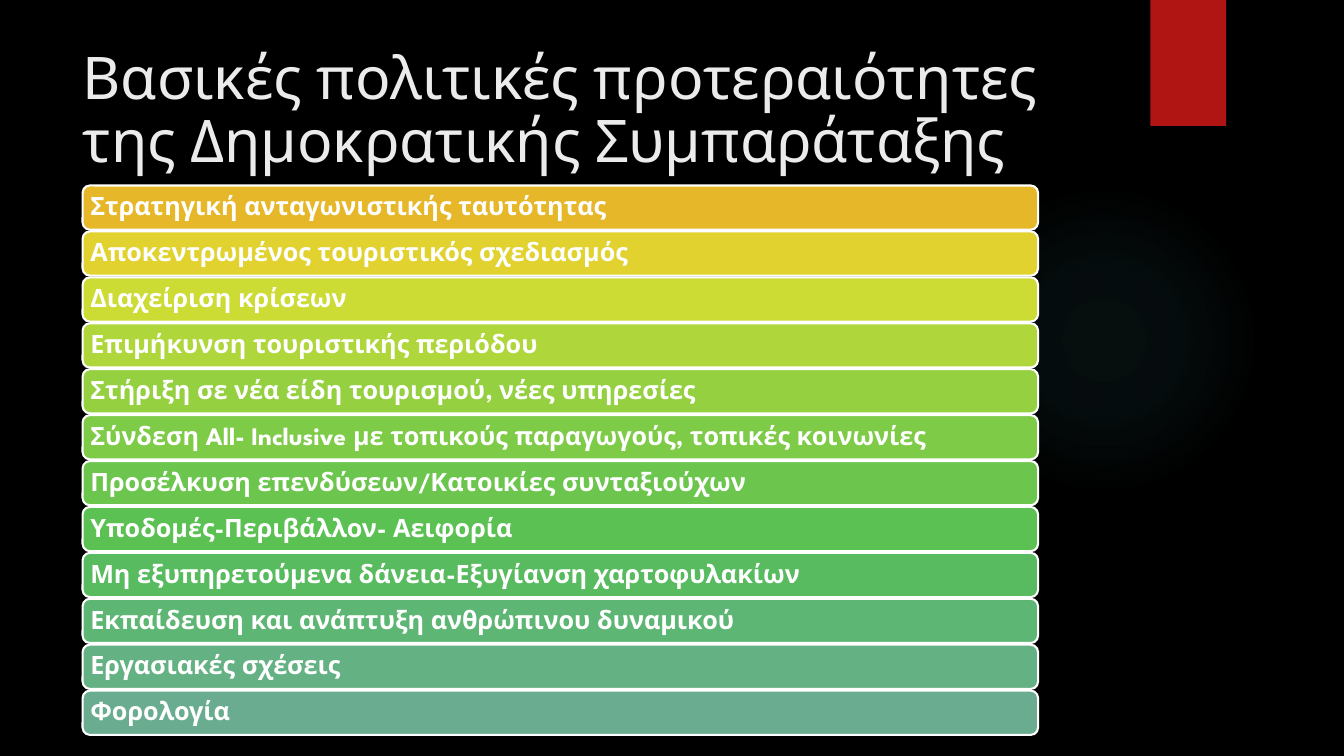
from dataclasses import dataclass

from lxml.etree import SubElement
from pptx import Presentation
from pptx.dml.color import RGBColor
from pptx.enum.shapes import MSO_SHAPE
from pptx.enum.text import MSO_ANCHOR, MSO_AUTO_SIZE, PP_ALIGN
from pptx.oxml.ns import qn
from pptx.shapes.autoshape import Shape
from pptx.slide import Slide
from pptx.text.text import TextFrame
from pptx.util import Pt

FONT = "League Spartan"
BLACK = RGBColor(0x00, 0x00, 0x00)
WHITE = RGBColor(0xFF, 0xFF, 0xFF)
TITLE_GREY = RGBColor(0xEB, 0xEB, 0xEB)
RIBBON_RED = RGBColor(0xB0, 0x15, 0x13)
GLOW_TEAL = RGBColor(0x50, 0xB9, 0xC1)

# Glow stops: position and opacity, both in percent
GLOW_STOPS = ((0, 7), (36, 6), (69, 0))

BAR_LEFT, BAR_TOP = 59, 132.5
BAR_WIDTH, BAR_HEIGHT = 682.5, 31.6
BAR_PITCH = 32.8


@dataclass(frozen=True)
class Priority:
    text: str
    color: RGBColor


PRIORITIES = (
    Priority("Στρατηγική ανταγωνιστικής ταυτότητας", RGBColor(0xE6, 0xB7, 0x29)),
    Priority("Αποκεντρωμένος τουριστικός σχεδιασμός", RGBColor(0xE1, 0xD2, 0x2F)),
    Priority("Διαχείριση κρίσεων", RGBColor(0xCD, 0xDB, 0x35)),
    Priority("Επιμήκυνση τουριστικής περιόδου", RGBColor(0xAF, 0xD6, 0x3B)),
    Priority("Στήριξη σε νέα είδη τουρισμού, νέες υπηρεσίες", RGBColor(0x95, 0xD0, 0x41)),
    Priority("Σύνδεση All- Inclusive με τοπικούς παραγωγούς, τοπικές κοινωνίες",
             RGBColor(0x7E, 0xCB, 0x47)),
    Priority("Προσέλκυση επενδύσεων/Κατοικίες συνταξιούχων", RGBColor(0x6C, 0xC6, 0x4D)),
    Priority("Υποδομές-Περιβάλλον- Αειφορία", RGBColor(0x5C, 0xC1, 0x53)),
    Priority("Μη εξυπηρετούμενα δάνεια-Εξυγίανση χαρτοφυλακίων",
             RGBColor(0x59, 0xBB, 0x60)),
    Priority("Εκπαίδευση και ανάπτυξη ανθρώπινου δυναμικού", RGBColor(0x5E, 0xB6, 0x74)),
    Priority("Εργασιακές σχέσεις", RGBColor(0x64, 0xB1, 0x84)),
    Priority("Φορολογία", RGBColor(0x6A, 0xAC, 0x90)),
)


def write_line(frame: TextFrame, text: str, size: float, color: RGBColor,
               bold: bool) -> None:
    frame.word_wrap = True
    frame.auto_size = MSO_AUTO_SIZE.NONE
    frame.vertical_anchor = MSO_ANCHOR.MIDDLE
    paragraph = frame.paragraphs[0]
    paragraph.alignment = PP_ALIGN.LEFT
    paragraph.line_spacing = 0.9
    run = paragraph.add_run()
    run.text = text
    run.font.name = FONT
    run.font.size = Pt(size)
    run.font.bold = bold
    run.font.color.rgb = color


def add_plain_shape(slide: Slide, preset: MSO_SHAPE, left: float, top: float,
                    width: float, height: float) -> Shape:
    shape = slide.shapes.add_shape(preset, Pt(left), Pt(top), Pt(width), Pt(height))
    shape.shadow.inherit = False
    shape.line.fill.background()
    return shape


def add_glow(slide: Slide) -> None:
    glow = add_plain_shape(slide, MSO_SHAPE.OVAL, 677.5, 131.75, 221.75, 221.75)
    glow.fill.gradient()
    gradient = glow._element.spPr.find(qn("a:gradFill"))
    for child in list(gradient):
        gradient.remove(child)
    stops = SubElement(gradient, qn("a:gsLst"))
    for position, opacity in GLOW_STOPS:
        stop = SubElement(stops, qn("a:gs"), pos=str(position * 1000))
        color = SubElement(stop, qn("a:srgbClr"), val=str(GLOW_TEAL))
        SubElement(color, qn("a:alpha"), val=str(opacity * 1000))
    circle = SubElement(gradient, qn("a:path"), path="circle")
    SubElement(circle, qn("a:fillToRect"), l="50000", t="50000", r="50000", b="50000")


def add_ribbon(slide: Slide) -> None:
    ribbon = add_plain_shape(slide, MSO_SHAPE.RECTANGLE, 821.75, 0, 54, 90)
    ribbon.fill.solid()
    ribbon.fill.fore_color.rgb = RIBBON_RED


def add_priority_bar(slide: Slide, priority: Priority, row: int) -> None:
    bar = add_plain_shape(slide, MSO_SHAPE.ROUNDED_RECTANGLE, BAR_LEFT,
                          BAR_TOP + row * BAR_PITCH, BAR_WIDTH, BAR_HEIGHT)
    bar.fill.solid()
    bar.fill.fore_color.rgb = priority.color
    bar.line.color.rgb = WHITE
    bar.line.width = Pt(1.5)
    frame = bar.text_frame
    frame.margin_left = frame.margin_right = Pt(4)
    frame.margin_top = frame.margin_bottom = Pt(4)
    write_line(frame, priority.text, 18, WHITE, bold=True)


def main() -> None:
    presentation = Presentation()
    presentation.slide_width, presentation.slide_height = Pt(960), Pt(540)
    slide = presentation.slides.add_slide(presentation.slide_layouts[5])
    slide.background.fill.solid()
    slide.background.fill.fore_color.rgb = BLACK

    # Backdrop
    add_glow(slide)
    add_ribbon(slide)

    # Title
    title = slide.shapes.title
    title.left, title.top = Pt(52), Pt(25)
    title.width, title.height = Pt(741), Pt(110)
    write_line(title.text_frame,
               "Βασικές πολιτικές προτεραιότητες της Δημοκρατικής Συμπαράταξης",
               42, TITLE_GREY, bold=False)

    # Political priorities
    for row, priority in enumerate(PRIORITIES):
        add_priority_bar(slide, priority, row)

    presentation.save("out.pptx")


if __name__ == "__main__":
    main()
